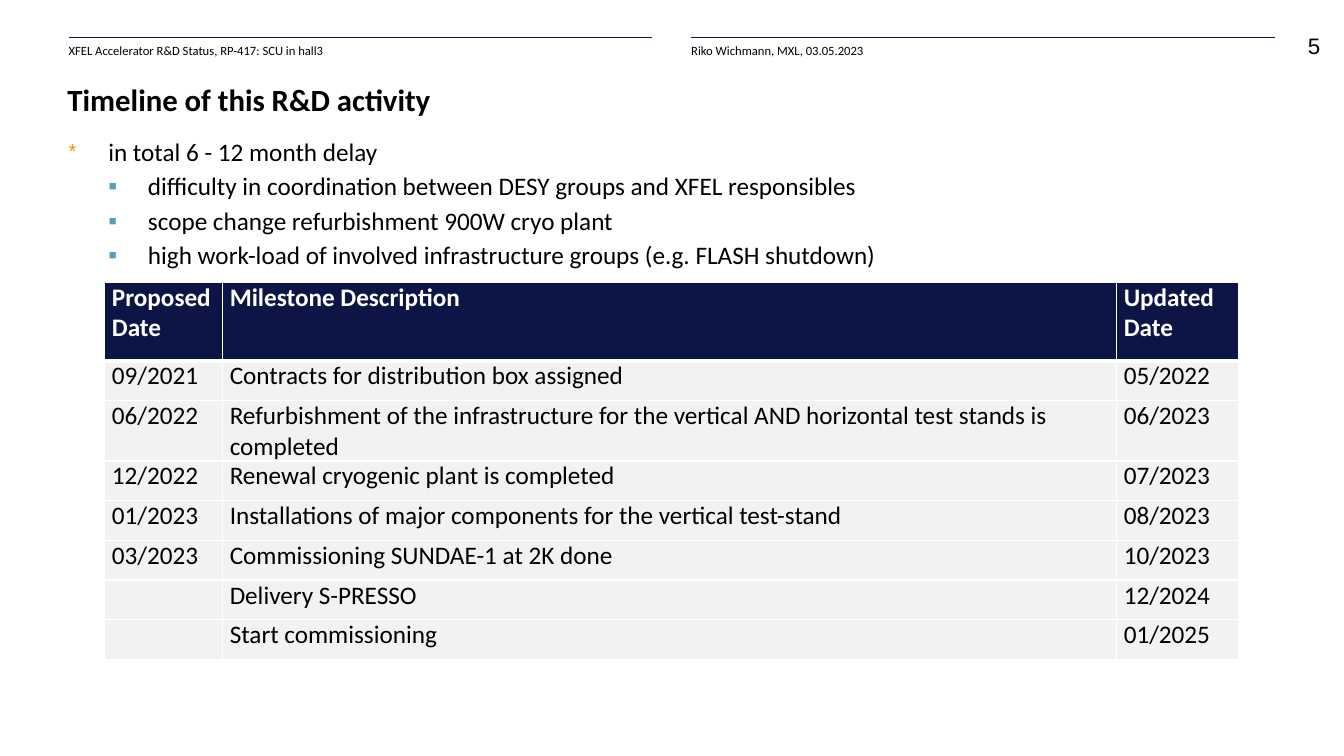
from lxml import etree
from pptx import Presentation
from pptx.dml.color import RGBColor
from pptx.enum.text import MSO_ANCHOR, PP_ALIGN
from pptx.oxml import parse_xml
from pptx.oxml.ns import nsdecls, qn
from pptx.util import Cm, Pt

NAVY, BLACK, WHITE, GREY = "0D1546", "000000", "FFFFFF", "F2F2F2"
ORANGE, BLUE = "F39200", "559DBB"


def color(value):
    return RGBColor.from_string(value)


def write(frame, text, size, font="Calibri", bold=False, ink=BLACK):
    """Put text in the frame's first paragraph, without margins, and return it."""
    for side in ("left", "top", "right", "bottom"):
        setattr(frame, f"margin_{side}", 0)
    paragraph = frame.paragraphs[0]
    paragraph.text = text
    for name, value in {"name": font, "size": Pt(size), "bold": bold}.items():
        setattr(paragraph.font, name, value)
    paragraph.font.color.rgb = color(ink)
    return paragraph


presentation = Presentation()
presentation.slide_width, presentation.slide_height = Cm(33.87), Cm(19.05)
slide = presentation.slides.add_slide(presentation.slide_layouts[5])
shapes = slide.shapes

# Header: two ruled columns and the page number
header_width = 14.71
for left, text in (
    (1.73, "XFEL Accelerator R&D Status, RP-417: SCU in hall3"),
    (17.42, "Riko Wichmann, MXL, 03.05.2023"),
):
    rule = shapes.add_connector(1, Cm(left), Cm(0.94), Cm(left + header_width), Cm(0.94))
    rule.line.color.rgb = color(NAVY)
    rule.line.width = Pt(0.5)
    etree.SubElement(rule._element.spPr, qn("a:effectLst"))
    box = shapes.add_textbox(Cm(left), Cm(1.07), Cm(header_width), Cm(0.61))
    box.text_frame.word_wrap = True
    write(box.text_frame, text, 9)

number_box = shapes.add_textbox(Cm(31.6), Cm(0.81), Cm(1.67), Cm(0.81))
number_box.text_frame.word_wrap = True
write(number_box.text_frame, "5", 16, font="Arial").alignment = PP_ALIGN.RIGHT

# Title
title = shapes.title
title.left, title.top, title.width, title.height = Cm(1.7), Cm(1.98), Cm(30.43), Cm(0.99)
title.text_frame.vertical_anchor = MSO_ANCHOR.BOTTOM
write(title.text_frame, "Timeline of this R&D activity", 22, bold=True).alignment = PP_ALIGN.LEFT

# Bulleted reasons for the delay
bullets = [
    (0, "in total 6 - 12 month delay"),
    (1, "difficulty in coordination between DESY groups and XFEL responsibles"),
    (1, "scope change refurbishment 900W cryo plant"),
    (1, "high work-load of involved infrastructure groups (e.g. FLASH shutdown)"),
]
bullet_styles = [("*", ORANGE, 80), ("▪", BLUE, 100)]
indent = Cm(1)
body = shapes.add_textbox(Cm(1.73), Cm(3.33), Cm(30.4), Cm(4.6))
frame = body.text_frame
frame.word_wrap = True
for side in ("left", "top", "right", "bottom"):
    setattr(frame, f"margin_{side}", 0)
for index, (level, text) in enumerate(bullets):
    paragraph = frame.paragraphs[0] if index == 0 else frame.add_paragraph()
    paragraph.text = text
    paragraph.level = level
    symbol, ink, percent = bullet_styles[level]
    properties = paragraph._p.get_or_add_pPr()
    properties.set("marL", str(indent * (level + 1)))
    properties.set("indent", str(-indent))
    for element in (
        f'<a:buClr {nsdecls("a")}><a:srgbClr val="{ink}"/></a:buClr>',
        f'<a:buSzPct {nsdecls("a")} val="{percent * 1000}"/>',
        f'<a:buFont {nsdecls("a")} typeface="Arial"/>',
        f'<a:buChar {nsdecls("a")} char="{symbol}"/>',
    ):
        properties.append(parse_xml(element))
    paragraph.line_spacing = 1.14
    paragraph.font.name, paragraph.font.size = "Calibri", Pt(18)
    paragraph.font.color.rgb = color(BLACK)

# Milestone table
milestones = [
    ("Proposed Date", "Milestone Description", "Updated Date"),
    ("09/2021", "Contracts for distribution box assigned", "05/2022"),
    ("06/2022", "Refurbishment of the infrastructure for the vertical AND horizontal "
                "test stands is completed", "06/2023"),
    ("12/2022", "Renewal cryogenic plant is completed", "07/2023"),
    ("01/2023", "Installations of major components for the vertical test-stand", "08/2023"),
    ("03/2023", "Commissioning SUNDAE-1 at 2K done", "10/2023"),
    ("", "Delivery S-PRESSO", "12/2024"),
    ("", "Start commissioning", "01/2025"),
]
column_widths = [2.97, 22.53, 3.07]
table = shapes.add_table(len(milestones), len(column_widths), Cm(2.64), Cm(7.11),
                         Cm(sum(column_widths)), Cm(8.98)).table
for column, width in zip(table.columns, column_widths):
    column.width = Cm(width)
for row_index, texts in enumerate(milestones):
    is_header = row_index == 0
    table.rows[row_index].height = Cm(1.98 if is_header else 1)
    for column_index, text in enumerate(texts):
        cell = table.cell(row_index, column_index)
        write(cell.text_frame, text, 18, bold=is_header, ink=WHITE if is_header else BLACK)
        cell.margin_left = cell.margin_right = Cm(0.18)
        cell.margin_top = cell.margin_bottom = 0
        properties = cell._tc.get_or_add_tcPr()
        for edge in ("lnL", "lnR", "lnT", "lnB"):
            heavy = (row_index, edge) in ((0, "lnB"), (1, "lnT"))
            properties.append(parse_xml(
                f'<a:{edge} {nsdecls("a")} w="{Pt(3 if heavy else 1)}"><a:solidFill>'
                f'<a:srgbClr val="{WHITE}"/></a:solidFill></a:{edge}>'))
        cell.fill.solid()
        cell.fill.fore_color.rgb = color(NAVY if is_header else GREY)

presentation.save("out.pptx")
